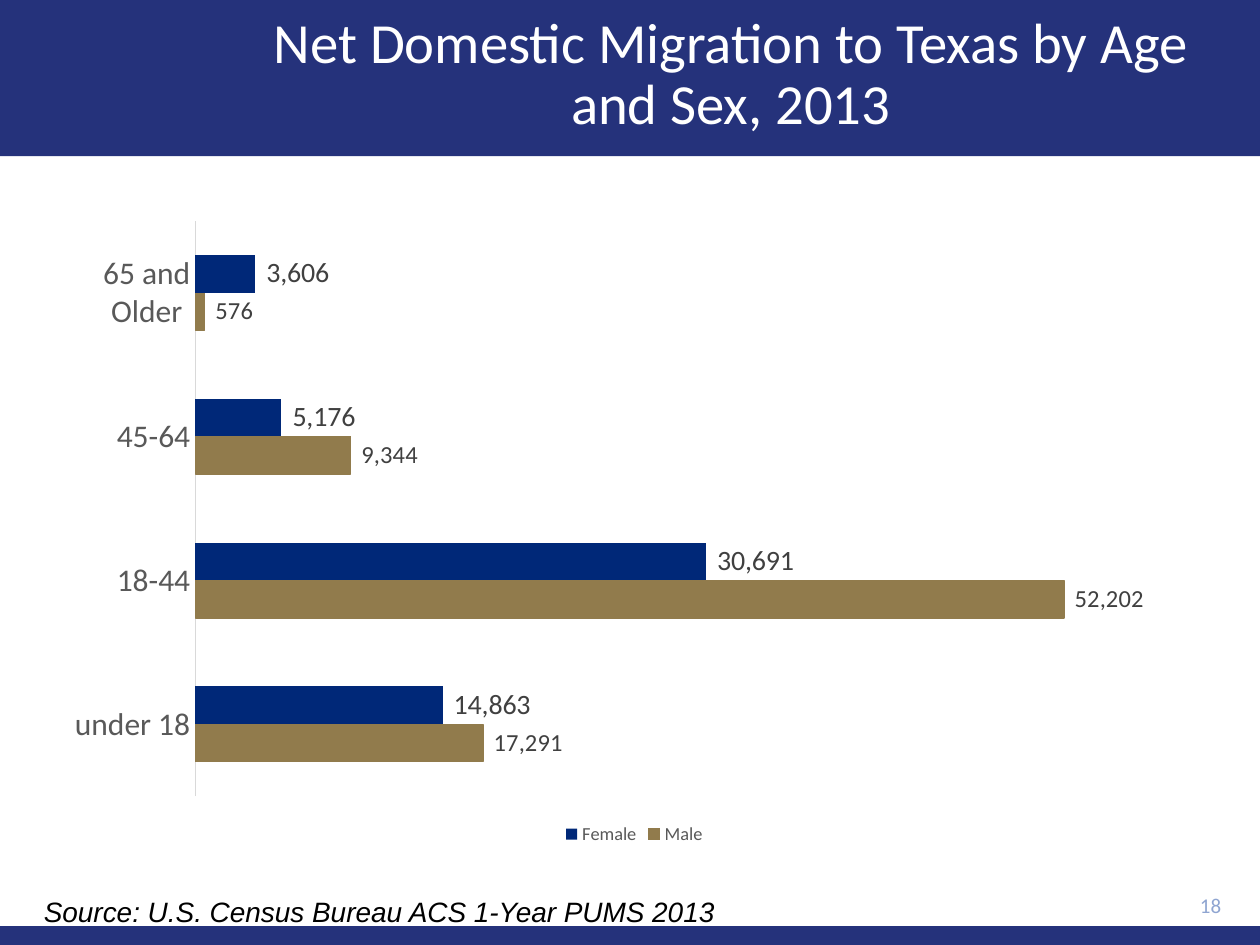
import pptx
import pptx.chart.data
import pptx.dml.color
import pptx.enum.chart
import pptx.enum.shapes
import pptx.enum.text
import pptx.util
from dataclasses import dataclass

Pt = pptx.util.Pt
Align = pptx.enum.text.PP_ALIGN
Anchor = pptx.enum.text.MSO_ANCHOR


@dataclass(frozen=True)
class Theme:
    band: str = "25327B"
    title: str = "FFFFFF"
    page: str = "8FA5D1"
    source: str = "000000"
    axis_text: str = "595959"
    axis_line: str = "D9D9D9"
    label: str = "404040"
    male: str = "917B4C"
    female: str = "002878"
    font: str = "Calibri"
    source_font: str = "Arial"
    title_size: float = 32.4
    source_size: float = 16
    page_size: float = 12
    axis_size: float = 18
    legend_size: float = 10.5
    chart_size: float = 10
    male_label_size: float = 14
    female_label_size: float = 16
    number_format: str = '_(* #,##0_);_(* \\(#,##0\\);_(* "-"??_);_(@_)'


class SlideBuilder:
    def __init__(self, slide, theme):
        self.slide = slide
        self.theme = theme

    def rgb(self, color):
        return pptx.dml.color.RGBColor.from_string(color)

    def style(self, font, size, color, name=None):
        font.name = name or self.theme.font
        font.size = Pt(size)
        font.color.rgb = self.rgb(color)

    def band(self, top, height):
        band = self.slide.shapes.add_shape(
            pptx.enum.shapes.MSO_SHAPE.RECTANGLE, 0, Pt(top), Pt(720), Pt(height))
        band.shadow.inherit = False
        band.fill.solid()
        band.fill.fore_color.rgb = self.rgb(self.theme.band)
        band.line.fill.background()
        self.slide.shapes.title.element.addprevious(band.element)

    def title(self, text, left, top, width, height):
        title = self.slide.shapes.title
        title.left, title.top = Pt(left), Pt(top)
        title.width, title.height = Pt(width), Pt(height)
        frame = title.text_frame
        frame.text = text
        frame.auto_size = pptx.enum.text.MSO_AUTO_SIZE.NONE
        frame.vertical_anchor = Anchor.MIDDLE
        heading = frame.paragraphs[0]
        heading.alignment = Align.CENTER
        heading.line_spacing = 0.9
        self.style(heading.runs[0].font, self.theme.title_size, self.theme.title)

    def text(self, text, box, size, color, name=None, italic=False,
             align=Align.LEFT, anchor=Anchor.TOP, spacing=1.0):
        frame = self.slide.shapes.add_textbox(*map(Pt, box)).text_frame
        frame.word_wrap = True
        frame.vertical_anchor = anchor
        frame.text = text
        line = frame.paragraphs[0]
        line.alignment = align
        line.line_spacing = spacing
        font = line.runs[0].font
        self.style(font, size, color, name)
        font.italic = italic

    def bar_chart(self, box, ages, sexes):
        theme = self.theme
        data = pptx.chart.data.CategoryChartData(number_format=theme.number_format)
        data.categories = ages
        for sex, counts, *_ in sexes:
            data.add_series(sex, counts)
        chart = self.slide.shapes.add_chart(
            pptx.enum.chart.XL_CHART_TYPE.BAR_CLUSTERED, *map(Pt, box), data).chart
        self.style(chart.font, theme.chart_size, theme.source)
        chart.has_title = False
        chart.has_legend = True
        chart.legend.position = pptx.enum.chart.XL_LEGEND_POSITION.BOTTOM
        chart.legend.include_in_layout = False
        self.style(chart.legend.font, theme.legend_size, theme.axis_text)

        age_axis = chart.category_axis
        age_axis.major_tick_mark = pptx.enum.chart.XL_TICK_MARK.NONE
        age_axis.format.line.color.rgb = self.rgb(theme.axis_line)
        age_axis.format.line.width = Pt(0.75)
        self.style(age_axis.tick_labels.font, theme.axis_size, theme.axis_text)
        chart.value_axis.visible = False
        chart.value_axis.has_major_gridlines = False
        chart.value_axis.minimum_scale = 0
        chart.value_axis.maximum_scale = 60000

        plot = chart.plots[0]
        plot.gap_width = 182
        plot.overlap = 0
        plot.vary_by_categories = False
        for series, (_, _, color, label_size, outlined) in zip(plot.series, sexes):
            series.format.fill.solid()
            series.format.fill.fore_color.rgb = self.rgb(color)
            if outlined:
                series.format.line.color.rgb = self.rgb(color)
                series.format.line.width = Pt(0.75)
            else:
                series.format.line.fill.background()
            labels = series.data_labels
            labels.show_value = True
            labels.position = pptx.enum.chart.XL_LABEL_POSITION.OUTSIDE_END
            labels.number_format = theme.number_format
            labels.number_format_is_linked = False
            self.style(labels.font, label_size, theme.label)


def main():
    theme = Theme()
    deck = pptx.Presentation()
    deck.slide_width, deck.slide_height = Pt(720), Pt(540)
    builder = SlideBuilder(deck.slides.add_slide(deck.slide_layouts[5]), theme)
    builder.band(0, 89.28)
    builder.band(529.2, 10.8)
    builder.title("Net Domestic Migration to Texas by Age and Sex, 2013",
                  122.4, 7.2, 590.4, 72)
    builder.text("18", (640.8, 504.72, 64.08, 24.48), theme.page_size, theme.page,
                 align=Align.RIGHT, anchor=Anchor.MIDDLE)
    builder.bar_chart(
        (29.52, 118.8, 666, 367.2),
        ["under 18", "18-44", "45-64", "65 and Older"],
        [("Male", (17291, 52202, 9344, 576), theme.male, theme.male_label_size, True),
         ("Female", (14863, 30691, 5176, 3606), theme.female,
          theme.female_label_size, False)])
    builder.text("Source: U.S. Census Bureau ACS 1-Year PUMS 2013",
                 (18, 504.72, 491.76, 28), theme.source_size, theme.source,
                 theme.source_font, italic=True, spacing=1.15)
    deck.save("out.pptx")


if __name__ == "__main__":
    main()
